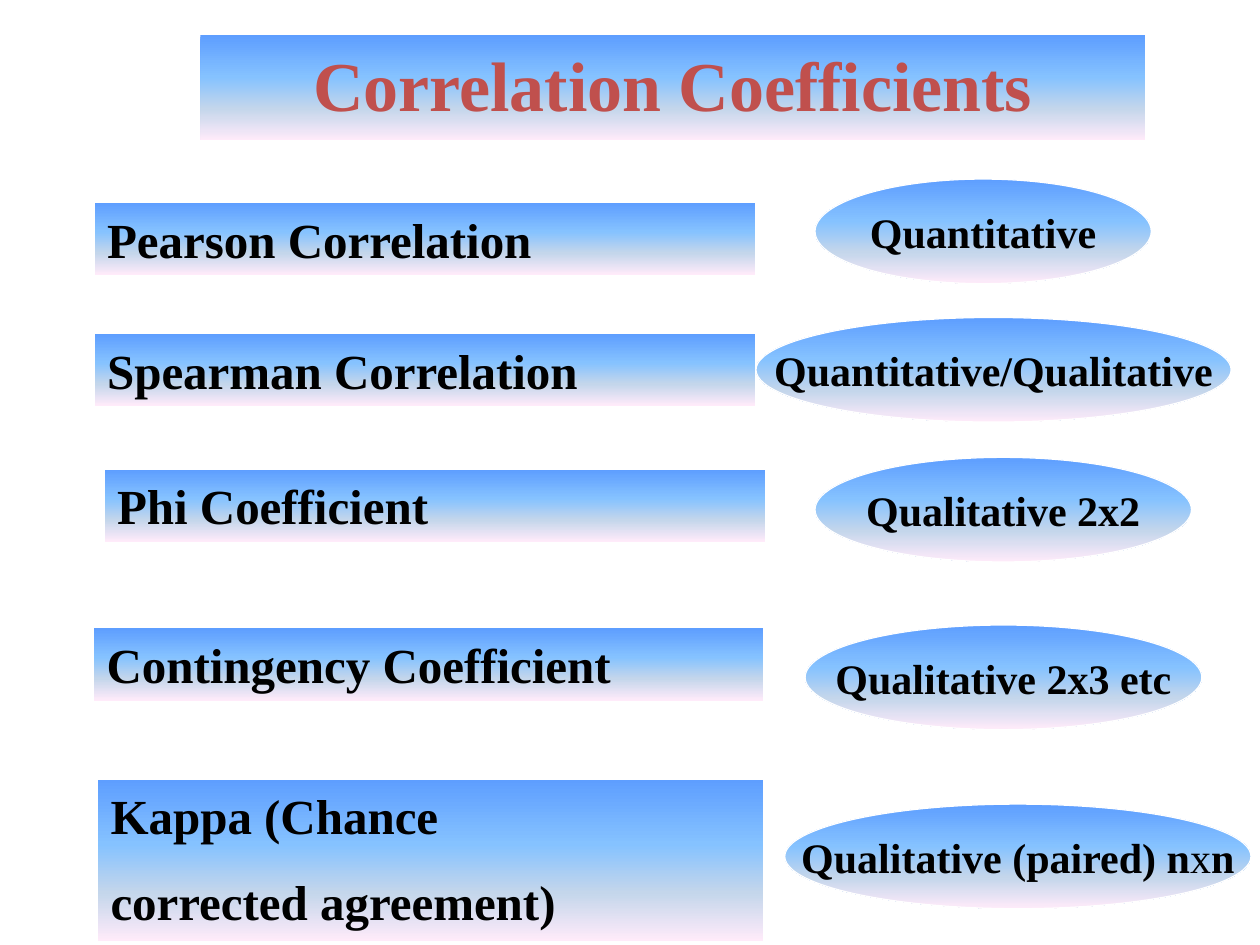
from lxml.etree import SubElement
from pptx import Presentation
from pptx.dml.color import RGBColor
from pptx.enum.shapes import MSO_SHAPE
from pptx.enum.text import MSO_ANCHOR, MSO_AUTO_SIZE, PP_ALIGN
from pptx.oxml.ns import qn
from pptx.util import Cm, Pt

FONT = "Times New Roman"
BLACK = RGBColor(0x00, 0x00, 0x00)
WHITE = RGBColor(0xFF, 0xFF, 0xFF)
RED = RGBColor(0xC0, 0x50, 0x4D)
GRADIENT = [
    (0, RGBColor(0x5E, 0x9E, 0xFF)),
    (40, RGBColor(0x85, 0xC2, 0xFF)),
    (70, RGBColor(0xC4, 0xD6, 0xEB)),
    (100, RGBColor(0xFF, 0xEB, 0xFA)),
]

COEFFICIENTS = [
    (["Pearson Correlation"], 1.91, 4.09, 13.31, 1.45),
    (["Spearman Correlation"], 1.91, 6.73, 13.31, 1.45),
    (["Phi Coefficient"], 2.11, 9.47, 13.31, 1.45),
    (["Contingency Coefficient"], 1.9, 12.67, 13.49, 1.45),
    (["Kappa (Chance", "corrected agreement)"], 1.98, 15.72, 13.41, 3.25),
]
DATA_TYPES = [
    ([("Quantitative", True)], 16.43, 3.61, 6.78),
    ([("Quantitative/Qualitative", True)], 15.24, 6.4, 9.58),
    ([("Qualitative 2x2", True)], 16.43, 9.22, 7.59),
    ([("Qualitative 2x3 etc", True)], 16.23, 12.6, 8),
    ([("Qualitative (paired) n", True), ("x", False), ("n", True)], 15.82, 16.21, 9.4),
]
OVAL_HEIGHT = 2.11


def fill_gradient(shape):
    shape.fill.gradient()
    shape.fill.gradient_angle = 270
    stops = shape.element.spPr.find(".//" + qn("a:gsLst"))
    for stop in list(stops):
        stops.remove(stop)
    for percent, color in GRADIENT:
        stop = SubElement(stops, qn("a:gs"), pos=str(percent * 1000))
        SubElement(stop, qn("a:srgbClr"), val=str(color))


def style_paragraph(paragraph, size, color):
    paragraph.font.name = FONT
    paragraph.font.size = Pt(size)
    paragraph.font.color.rgb = color


def add_title(slide):
    title = slide.shapes.title
    title.left, title.top = Cm(4.04), Cm(0.71)
    title.width, title.height = Cm(19.05), Cm(1.96)
    fill_gradient(title)
    frame = title.text_frame
    frame.text = "Correlation Coefficients"
    frame.vertical_anchor = MSO_ANCHOR.TOP
    frame.auto_size = MSO_AUTO_SIZE.SHAPE_TO_FIT_TEXT
    heading = frame.paragraphs[0]
    heading.alignment = PP_ALIGN.CENTER
    style_paragraph(heading, 40, RED)
    heading.font.bold = True


def add_coefficient(slide, lines, left, top, width, height):
    bar = slide.shapes.add_textbox(Cm(left), Cm(top), Cm(width), Cm(height))
    fill_gradient(bar)
    frame = bar.text_frame
    frame.word_wrap = True
    frame.auto_size = MSO_AUTO_SIZE.SHAPE_TO_FIT_TEXT
    frame.text = "\n".join(lines)
    for paragraph in frame.paragraphs:
        style_paragraph(paragraph, 28, BLACK)
        paragraph.font.bold = True
    for paragraph in frame.paragraphs[1:]:
        paragraph.space_before = Pt(15)


def add_data_type(slide, parts, left, top, width):
    oval = slide.shapes.add_shape(
        MSO_SHAPE.OVAL, Cm(left), Cm(top), Cm(width), Cm(OVAL_HEIGHT))
    oval.shadow.inherit = False
    fill_gradient(oval)
    oval.line.color.rgb = WHITE
    oval.line.width = Pt(0.75)
    frame = oval.text_frame
    frame.word_wrap = False
    frame.vertical_anchor = MSO_ANCHOR.MIDDLE
    label = frame.paragraphs[0]
    label.alignment = PP_ALIGN.CENTER
    style_paragraph(label, 24, BLACK)
    for text, bold in parts:
        run = label.add_run()
        run.text = text
        run.font.bold = bold


def main():
    presentation = Presentation()
    presentation.slide_width = Cm(25.4)
    presentation.slide_height = Cm(19.05)
    slide = presentation.slides.add_slide(presentation.slide_layouts[5])
    add_title(slide)
    for coefficient in COEFFICIENTS:
        add_coefficient(slide, *coefficient)
    for data_type in DATA_TYPES:
        add_data_type(slide, *data_type)
    presentation.save("out.pptx")


if __name__ == "__main__":
    main()
